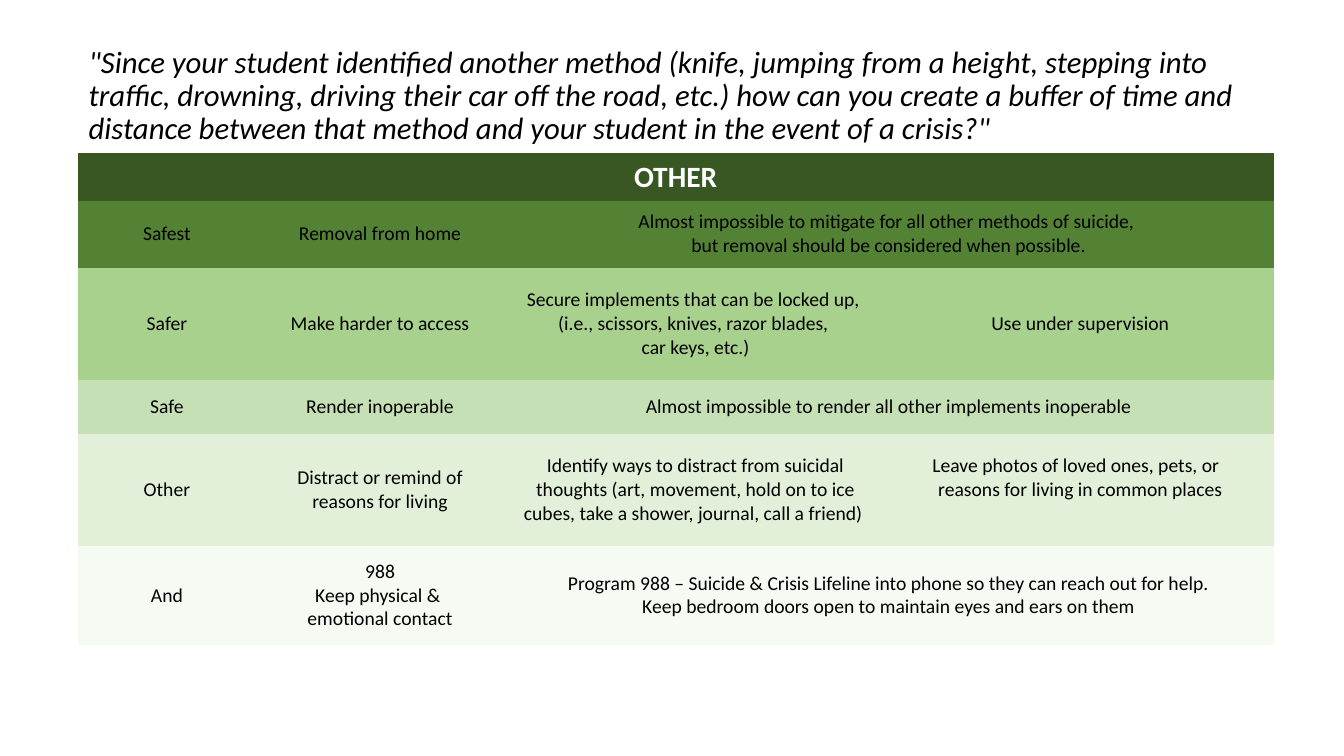
from pptx import Presentation
from pptx.dml.color import RGBColor
from pptx.enum.text import MSO_ANCHOR, PP_ALIGN
from pptx.oxml.ns import qn

PX = 9525
FONT = "Calibri"
NO_STYLE = "{2D5ABB26-0587-4C30-8999-92F81FD0307C}"
COLORS = {
    "text": "000000",
    "header_text": "FFFFFF",
    "header": "385723",
    "safest": "548235",
    "safer": "A9D18E",
    "safe": "C5E0B4",
    "other": "E2F0D9",
    "and": "F5FAF2",
}

QUESTION = (
    '"Since your student identified another method (knife, jumping from a height, '
    "stepping into traffic, drowning, driving their car off the road, etc.) how can "
    "you create a buffer of time and distance between that method and your student "
    'in the event of a crisis?" '
)
QUESTION_BOX = (75, 38, 1139, 108)
TABLE_ORIGIN = (74, 146)
COLUMN_WIDTHS = [170, 236, 365, 368]
PHOTO_CELL = (4, 3)
PHOTO_BOTTOM_MARGIN = 28

ROWS = [
    ("header", 45, [["OTHER"]]),
    ("safest", 64, [
        ["Safest"],
        ["Removal from home"],
        ["Almost impossible to mitigate for all other methods of suicide, ",
         "but removal should be considered when possible."],
    ]),
    ("safer", 107, [
        ["Safer"],
        ["Make harder to access"],
        ["Secure implements that can be locked up, ",
         "(i.e., scissors, knives, razor blades, ",
         "car keys, etc.)"],
        ["Use under supervision"],
    ]),
    ("safe", 51, [
        ["Safe"],
        ["Render inoperable"],
        ["Almost impossible to render all other implements inoperable"],
    ]),
    ("other", 107, [
        ["Other"],
        ["Distract or remind of reasons for living"],
        ["Identify ways to distract from suicidal thoughts (art, movement, hold "
         "on to ice cubes, take a shower, journal, call a friend) "],
        ["Leave photos of loved ones, pets, or  ",
         "reasons for living in common places"],
    ]),
    ("and", 94, [
        ["And"],
        ["988", "Keep physical & ", "emotional contact"],
        ["Program 988 – Suicide & Crisis Lifeline into phone so they can reach out for help.",
         "Keep bedroom doors open to maintain eyes and ears on them"],
    ]),
]


def write(frame, lines, size=14, color="text", bold=False, italic=False,
          align=PP_ALIGN.CENTER, spacing=None):
    frame.word_wrap = True
    for index, line in enumerate(lines):
        para = frame.paragraphs[0] if index == 0 else frame.add_paragraph()
        para.alignment = align
        if spacing:
            para.line_spacing = spacing
        span = para.add_run()
        span.text = line
        span.font.name = FONT
        span.font.size = int(size * 12700)
        span.font.bold = bold
        span.font.italic = italic
        span.font.color.rgb = RGBColor.from_string(COLORS[color])


def add_question(page):
    box = page.shapes.add_textbox(*(value * PX for value in QUESTION_BOX))
    box.text_frame.vertical_anchor = MSO_ANCHOR.MIDDLE
    write(box.text_frame, [QUESTION], size=22, italic=True,
          align=PP_ALIGN.LEFT, spacing=0.9)


def add_safety_table(page):
    left, top = TABLE_ORIGIN
    height = sum(row[1] for row in ROWS)
    last = len(COLUMN_WIDTHS) - 1
    table = page.shapes.add_table(
        len(ROWS), len(COLUMN_WIDTHS), left * PX, top * PX,
        sum(COLUMN_WIDTHS) * PX, height * PX).table
    table.horz_banding = False
    table.first_row = False
    table._tbl.tblPr.find(qn("a:tableStyleId")).text = NO_STYLE
    for column, width in zip(table.columns, COLUMN_WIDTHS):
        column.width = width * PX

    for row_index, (name, row_height, texts) in enumerate(ROWS):
        table.rows[row_index].height = row_height * PX
        for column_index in range(last + 1):
            cell = table.cell(row_index, column_index)
            cell.fill.solid()
            cell.fill.fore_color.rgb = RGBColor.from_string(COLORS[name])
        if len(texts) <= last:
            table.cell(row_index, len(texts) - 1).merge(table.cell(row_index, last))
        for column_index, lines in enumerate(texts):
            cell = table.cell(row_index, column_index)
            if name == "header":
                cell.vertical_anchor = MSO_ANCHOR.BOTTOM
                write(cell.text_frame, lines, size=21, color="header_text", bold=True)
            else:
                cell.vertical_anchor = MSO_ANCHOR.MIDDLE
                write(cell.text_frame, lines)
    table.cell(*PHOTO_CELL).margin_bottom = PHOTO_BOTTOM_MARGIN * PX


def main():
    deck = Presentation()
    deck.slide_width = 1280 * PX
    deck.slide_height = 720 * PX
    page = deck.slides.add_slide(deck.slide_layouts[6])
    add_question(page)
    add_safety_table(page)
    deck.save("out.pptx")


if __name__ == "__main__":
    main()
